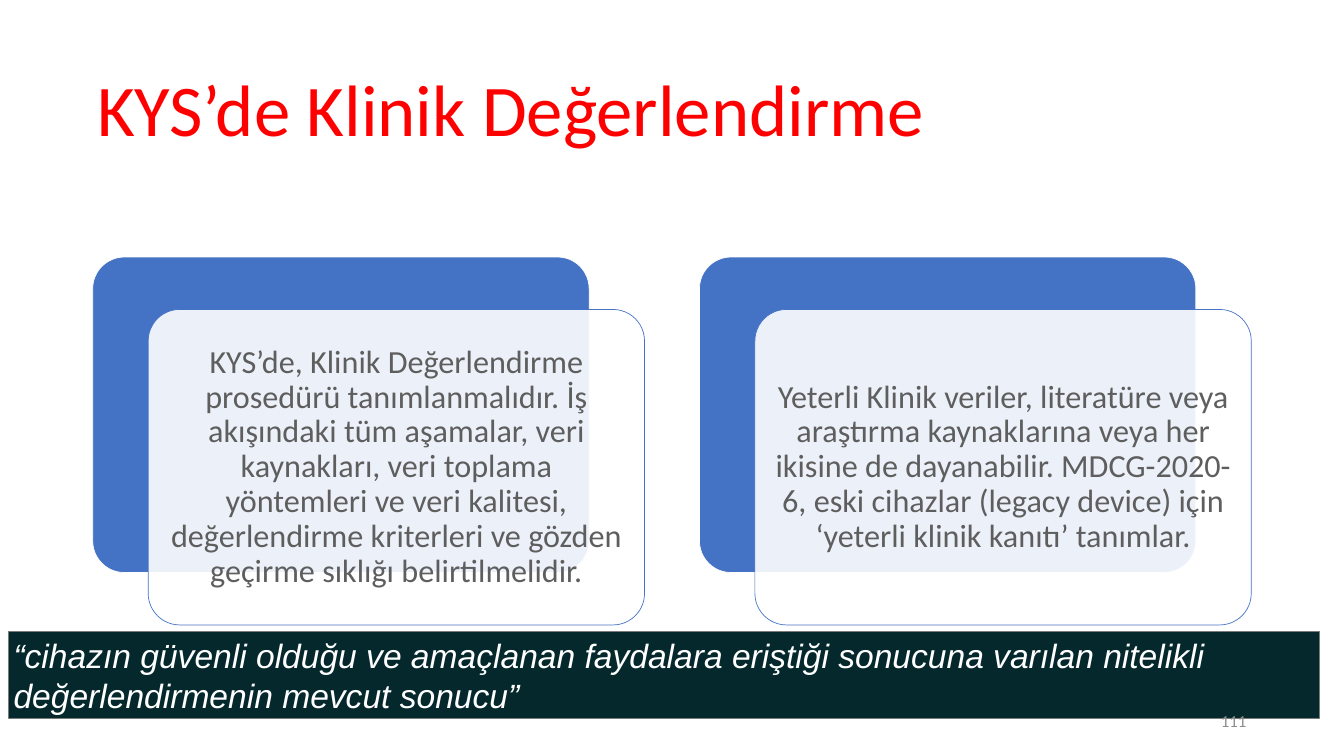
"""Build the slide on clinical evaluation in the quality management system."""
from typing import NamedTuple

from lxml.etree import SubElement
from pptx import Presentation
from pptx.dml.color import RGBColor
from pptx.enum.shapes import MSO_SHAPE as Preset
from pptx.enum.text import MSO_ANCHOR as Anchor, PP_ALIGN as Align
from pptx.oxml.ns import qn
from pptx.shapes.autoshape import Shape
from pptx.slide import Slide
from pptx.util import Inches, Pt

COLORS = {
    "title": "FF0000",
    "blue": "4472C4",
    "white": "FFFFFF",
    "body": "5E5E5E",
    "banner": "04282C",
    "banner_line": "7A7A7A",
    "number": "8C8C8C",
}


class Area(NamedTuple):
    left: float
    top: float
    width: float
    height: float


class TextStyle(NamedTuple):
    size: float
    color: str
    font: str = "Calibri"
    align: Align = Align.LEFT
    italic: bool = False
    line_spacing: float = 1.0


class Card(NamedTuple):
    left: float
    text: str


TITLE = TextStyle(104, "title", line_spacing=0.9)
BODY = TextStyle(46, "body", align=Align.CENTER, line_spacing=0.9)
QUOTE = TextStyle(48, "white", font="Arial", italic=True)
NUMBER = TextStyle(24, "number", align=Align.RIGHT)

CARD_TOP, CARD_WIDTH, CARD_HEIGHT = 5.1, 9.85, 6.26
PANEL_SHIFT_X, PANEL_SHIFT_Y = 1.1, 1.04
CORNER_MARGIN = 0.18
TEXT_INSET = 0.19

CARDS = [
    Card(1.84, "KYS’de, Klinik Değerlendirme prosedürü tanımlanmalıdır. İş akışındaki tüm "
               "aşamalar, veri kaynakları, veri toplama yöntemleri ve veri kalitesi, "
               "değerlendirme kriterleri ve gözden geçirme sıklığı belirtilmelidir."),
    Card(13.88, "Yeterli Klinik veriler, literatüre veya araştırma kaynaklarına veya her "
                "ikisine de dayanabilir. MDCG-2020-6, eski cihazlar (legacy device) için "
                "‘yeterli klinik kanıtı’ tanımlar."),
]


def rgb(name: str) -> RGBColor:
    """Return the named colour."""
    return RGBColor.from_string(COLORS[name])


def write(box: Shape, text: str, style: TextStyle) -> None:
    """Put one styled paragraph, centred vertically, into a box."""
    frame = box.text_frame
    frame.text = text
    frame.word_wrap = True
    frame.vertical_anchor = Anchor.MIDDLE
    para = frame.paragraphs[0]
    para.alignment = style.align
    para.line_spacing = style.line_spacing
    font = para.runs[0].font
    font.name, font.size, font.italic = style.font, Pt(style.size), style.italic
    font.color.rgb = rgb(style.color)


def add_text(page: Slide, area: Area, text: str, style: TextStyle) -> Shape:
    """Add a text box."""
    box = page.shapes.add_textbox(*map(Inches, area))
    write(box, text, style)
    return box


def add_block(page: Slide, preset: Preset, area: Area, fill: str, line: str) -> Shape:
    """Add a filled and outlined shape."""
    block = page.shapes.add_shape(preset, *map(Inches, area))
    block.shadow.inherit = False
    block.fill.solid()
    block.fill.fore_color.rgb = rgb(fill)
    block.line.color.rgb = rgb(line)
    block.line.width = Pt(1)
    return block


def set_opacity(block: Shape, percent: int) -> None:
    """Make the fill of a shape partly transparent."""
    color = block.fill._xPr.find(qn("a:solidFill"))[0]
    SubElement(color, qn("a:alpha"), val=str(percent * 1000))


def add_card(page: Slide, card: Card) -> None:
    """Add a blue back plate with a translucent text panel shifted over it."""
    back_area = Area(card.left, CARD_TOP, CARD_WIDTH, CARD_HEIGHT)
    panel_area = back_area._replace(left=card.left + PANEL_SHIFT_X, top=CARD_TOP + PANEL_SHIFT_Y)
    back = add_block(page, Preset.ROUNDED_RECTANGLE, back_area, "blue", "white")
    panel = add_block(page, Preset.ROUNDED_RECTANGLE, panel_area, "white", "blue")
    for block in (back, panel):
        block.adjustments[0] = 0.1
    set_opacity(panel, 90)
    text_area = Area(panel_area.left + CORNER_MARGIN, panel_area.top + CORNER_MARGIN,
                     CARD_WIDTH - 2 * CORNER_MARGIN, CARD_HEIGHT - 2 * CORNER_MARGIN)
    frame = add_text(page, text_area, card.text, BODY).text_frame
    frame.margin_left = frame.margin_right = Inches(TEXT_INSET)
    frame.margin_top = frame.margin_bottom = Inches(TEXT_INSET)


def main() -> None:
    """Build and save the deck."""
    deck = Presentation()
    deck.slide_width, deck.slide_height = Inches(26.67), Inches(15)
    page = deck.slides.add_slide(deck.slide_layouts[6])
    add_text(page, Area(1.83, 0.8, 23, 2.9), "KYS’de Klinik Değerlendirme", TITLE)
    for card in CARDS:
        add_card(page, card)
    banner = add_block(page, Preset.RECTANGLE, Area(0.17, 12.53, 26.02, 1.72),
                       "banner", "banner_line")
    write(banner, "“cihazın güvenli olduğu ve amaçlanan faydalara eriştiği sonucuna varılan "
                  "nitelikli değerlendirmenin mevcut sonucu”", QUOTE)
    add_text(page, Area(18.83, 13.9, 6, 0.8), "111", NUMBER)
    deck.save("out.pptx")


if __name__ == "__main__":
    main()
